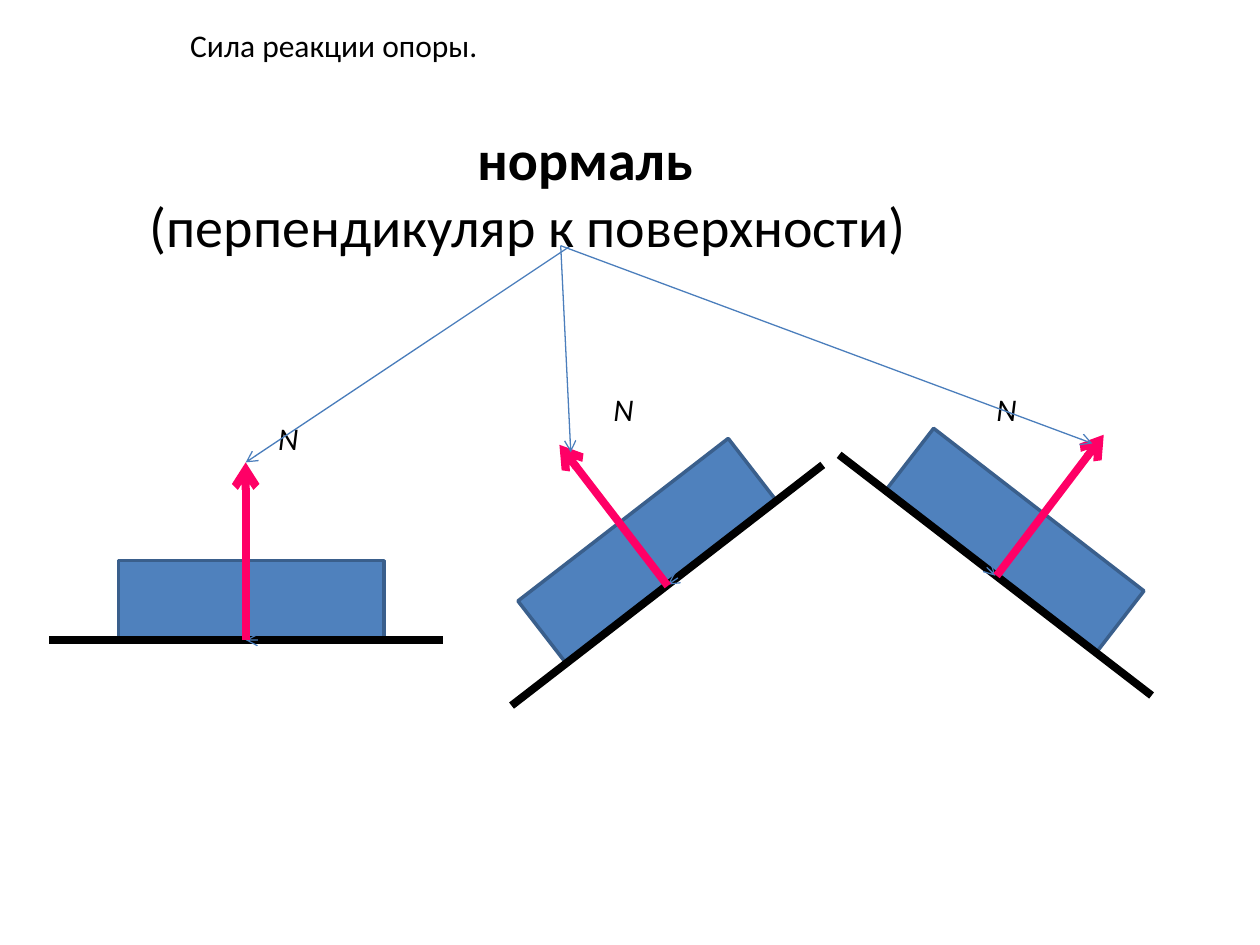
import pptx
import pptx.util
from lxml import etree
from pptx.dml.color import RGBColor
from pptx.enum.shapes import MSO_CONNECTOR, MSO_SHAPE
from pptx.enum.text import MSO_ANCHOR, MSO_AUTO_SIZE, PP_ALIGN
from pptx.oxml.ns import qn
from pptx.util import Inches, Pt

FONT = "Calibri"
BLACK, BLUE, EDGE, THIN, PINK = "000000", "4F81BD", "3A5F8C", "4B7EBC", "FF0066"
BLOCK_W, BLOCK_H = 2.11, 0.62

TITLE = "Сила реакции опоры."
NORMAL = [("нормаль", True, PP_ALIGN.CENTER),
          ("(перпендикуляр к поверхности)", False, PP_ALIGN.LEFT)]

# Lines are (x1, y1, x2, y2)
BLOCKS = [
    {"corner": (0.94, 4.45), "rotation": 0, "surface": (0.39, 5.08, 3.52, 5.08),
     "tick": (1.99, 5.08, 1.95, 5.08), "force": (1.95, 5.08, 1.95, 3.67),
     "label": (2.11, 3.28)},
    {"corner": (4.08, 4.06), "rotation": 322.3, "surface": (4.06, 5.6, 6.53, 3.69),
     "tick": (5.33, 4.62, 5.3, 4.64), "force": (5.3, 4.65, 4.44, 3.53),
     "label": (4.77, 3.05)},
    {"corner": (7, 3.98), "rotation": 37.7, "surface": (9.14, 5.52, 6.66, 3.61),
     "tick": (7.87, 4.54, 7.9, 4.57), "force": (7.91, 4.57, 8.76, 3.45),
     "label": (7.81, 3.05)},
]
POINTERS = [(4.45, 1.95, 4.53, 3.59), (4.45, 1.95, 8.67, 3.52), (4.53, 1.95, 1.95, 3.67)]


def rgb(color):
    return RGBColor.from_string(color)


def add_line(shapes, ends, color, width, arrow=False):
    line = shapes.add_connector(MSO_CONNECTOR.STRAIGHT, *map(Inches, ends))
    line.line.color.rgb = rgb(color)
    line.line.width = Pt(width)
    if arrow:
        etree.SubElement(line.line._get_or_add_ln(), qn("a:tailEnd"), type="arrow")
    etree.SubElement(line._element.spPr, qn("a:effectLst"))


def add_run(p, text, size, bold=False, italic=False):
    r = p.add_run()
    r.text = text
    f = r.font
    f.name, f.size, f.bold, f.italic = FONT, Pt(size), bold, italic
    f.color.rgb = rgb(BLACK)


def add_text_frame(shapes, x, y, w, h):
    tf = shapes.add_textbox(*map(Inches, (x, y, w, h))).text_frame
    tf.word_wrap = True
    return tf


def add_block(shapes, block):
    x, y = block["corner"]
    sp = shapes.add_shape(MSO_SHAPE.RECTANGLE, *map(Inches, (x, y, BLOCK_W, BLOCK_H)))
    sp.rotation = block["rotation"]
    sp.shadow.inherit = False
    sp.fill.solid()
    sp.fill.fore_color.rgb = rgb(BLUE)
    sp.line.color.rgb = rgb(EDGE)
    sp.line.width = Pt(2)
    add_line(shapes, block["surface"], BLACK, 4.5)
    add_line(shapes, block["tick"], THIN, 0.75, arrow=True)
    add_line(shapes, block["force"], PINK, 4.5, arrow=True)


prs = pptx.Presentation()
prs.slide_width, prs.slide_height = Inches(10), Inches(7.5)
s = prs.slides.add_slide(prs.slide_layouts[5])

for block in BLOCKS:
    add_block(s.shapes.add_group_shape().shapes, block)
for block in BLOCKS:
    tf = add_text_frame(s.shapes, *block["label"], 1.02, 0.84)
    add_run(tf.paragraphs[0], "N", 18, italic=True)
for ends in POINTERS:
    add_line(s.shapes, ends, THIN, 0.75, arrow=True)

tf = add_text_frame(s.shapes, 1.09, 0.94, 7.11, 1.18)
for i, (text, bold, align) in enumerate(NORMAL):
    p = tf.add_paragraph() if i else tf.paragraphs[0]
    p.alignment = align
    add_run(p, text, 32, bold=bold)

title = s.shapes.title
title.left, title.top, title.width, title.height = map(Inches, (1.41, 0.16, 7.27, 0.84))
tf = title.text_frame
tf.vertical_anchor = MSO_ANCHOR.TOP
tf.auto_size = MSO_AUTO_SIZE.NONE
tf.paragraphs[0].alignment = PP_ALIGN.LEFT
add_run(tf.paragraphs[0], TITLE, 18)

prs.save("out.pptx")
